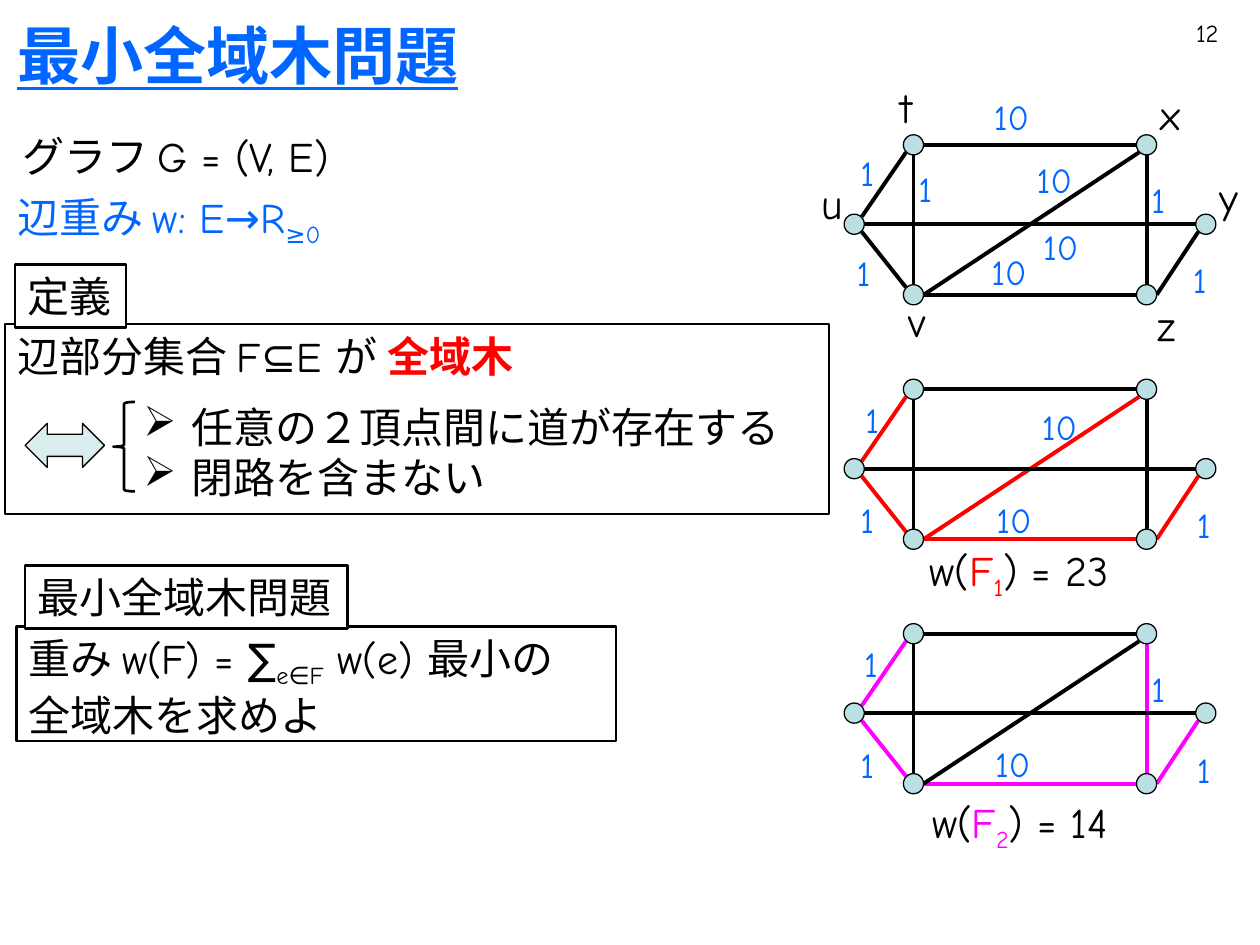
from dataclasses import dataclass
from typing import NamedTuple

from lxml.etree import SubElement
from pptx import Presentation
from pptx.dml.color import RGBColor
from pptx.enum.shapes import MSO_CONNECTOR, MSO_SHAPE as SHAPE
from pptx.enum.text import MSO_ANCHOR, MSO_AUTO_SIZE, PP_ALIGN
from pptx.oxml.ns import qn
from pptx.util import Inches, Pt


@dataclass(frozen=True)
class Theme:
    black: str = "000000"
    white: str = "FFFFFF"
    blue: str = "0066FF"
    red: str = "FF0000"
    magenta: str = "FF00FF"
    vertex: str = "BBE0E3"
    arrow: str = "DAEDEF"
    latin: str = "Comic Neue"
    cjk: str = "Noto Sans CJK JP"
    title: int = 36
    body: int = 24
    weight: int = 20
    page: int = 14
    thin: float = 0.75
    frame: float = 1.5
    edge: float = 2.25


T = Theme()


class Run(NamedTuple):
    text: str
    color: str = T.black
    bold: bool = False
    underline: bool = False
    sub: bool = False


class Para(NamedTuple):
    runs: list[Run]
    bullet: bool = False
    before: int = 0


class Box(NamedTuple):
    left: float
    top: float
    width: float
    height: float


class Graph(NamedTuple):
    dy: float
    tree: str
    color: str
    weights: list[tuple[str, float, float]]


RADIUS = 0.08
PITCH = 1.94
VERTICES = {"u": (6.78, 1.78), "t": (7.25, 1.15), "v": (7.25, 2.34),
            "x": (9.1, 1.15), "z": (9.1, 2.34), "y": (9.57, 1.78)}
SITES = {"E": (0.08, 0), "W": (-0.08, 0), "N": (0, -0.08), "S": (0, 0.08),
         "NE": (0.06, -0.06), "SE": (0.06, 0.06),
         "NW": (-0.06, -0.06), "SW": (-0.06, 0.06)}
EDGES = {"tu": ("SW", "NE"), "uv": ("SE", "NW"), "tx": ("E", "W"),
         "vz": ("E", "W"), "xz": ("S", "N"), "tv": ("S", "N"),
         "zy": ("E", "SW"), "vx": ("E", "SW"), "uy": ("E", "W")}

GRAPHS = [
    Graph(0, "", T.black, [
        ("10", 7.79, 0.71), ("1", 6.73, 1.15), ("10", 8.13, 1.21),
        ("10", 8.18, 1.74), ("10", 7.77, 1.94), ("1", 7.19, 1.28),
        ("1", 6.7, 1.95), ("1", 9.37, 2), ("1", 9.04, 1.37)]),
    Graph(PITCH, "tu uv vz zy vx", T.red, [
        ("1", 6.77, 3.11), ("10", 8.17, 3.17), ("10", 7.81, 3.91),
        ("1", 6.73, 3.91), ("1", 9.4, 3.95)]),
    Graph(2 * PITCH, "tu uv vz xz zy", T.magenta, [
        ("1", 6.76, 5.05), ("10", 7.8, 5.84), ("1", 6.73, 5.85),
        ("1", 9.4, 5.89), ("1", 9.04, 5.25)]),
]
NAMES = [("t", 7.05, 0.6), ("u", 6.42, 1.36), ("v", 7.11, 2.3),
         ("z", 9.09, 2.33), ("y", 9.58, 1.31), ("x", 9.11, 0.65)]


def rgb(color: str) -> RGBColor:
    return RGBColor.from_string(color)


def add_run(p, run: Run, size: int, latin: str) -> None:
    r = p.add_run()
    r.text = run.text
    fmt = {"size": Pt(size), "name": latin, "bold": run.bold, "underline": run.underline}
    for name, value in fmt.items():
        setattr(r.font, name, value)
    r.font.color.rgb = rgb(run.color)
    rpr = r.font._element
    SubElement(rpr, qn("a:ea")).set("typeface", T.cjk)
    if run.sub:
        rpr.set("baseline", "-25000")


def add_bullet(p) -> None:
    p.level = 2
    ppr = p._p.get_or_add_pPr()
    ppr.set("marL", str(Inches(1.38)))
    ppr.set("indent", str(Inches(-0.38)))
    SubElement(ppr, qn("a:buChar")).set("char", "➢")


def write(sp, paras: list[Para], size: int = T.body, latin: str = T.latin,
          align=PP_ALIGN.LEFT, anchor=MSO_ANCHOR.TOP, grow: bool = True) -> None:
    tf = sp.text_frame
    fmt = {"word_wrap": not grow, "vertical_anchor": anchor,
           "auto_size": MSO_AUTO_SIZE.SHAPE_TO_FIT_TEXT if grow else MSO_AUTO_SIZE.NONE}
    for name, value in fmt.items():
        setattr(tf, name, value)
    for i, para in enumerate(paras):
        p = tf.add_paragraph() if i else tf.paragraphs[0]
        p.alignment = align
        if para.before:
            p.space_before = Pt(para.before)
        if para.bullet:
            add_bullet(p)
        for run in para.runs:
            add_run(p, run, size, latin)


def add_text(s, box: Box, runs: list[Run], **style) -> None:
    write(s.shapes.add_textbox(*map(Inches, box)), [Para(runs)], **style)


def add_shape(s, kind, box: Box, fill: str = "", width: float = T.thin):
    sp = s.shapes.add_shape(kind, *map(Inches, box))
    sp.shadow.inherit = False
    if fill:
        sp.fill.solid()
        sp.fill.fore_color.rgb = rgb(fill)
    else:
        sp.fill.background()
    sp.line.color.rgb = rgb(T.black)
    sp.line.width = Pt(width)
    return sp


def add_frame(s, box: Box, paras: list[Para], fill: str = "") -> None:
    write(add_shape(s, SHAPE.RECTANGLE, box, fill, T.frame), paras)


def add_edge(s, edge: str, dy: float, color: str) -> None:
    """Join the named contact sites on the rims of two vertices."""
    ends = []
    for vertex, site in zip(edge, EDGES[edge]):
        (x, y), (ox, oy) = VERTICES[vertex], SITES[site]
        ends += [Inches(x + ox), Inches(y + oy + dy)]
    c = s.shapes.add_connector(MSO_CONNECTOR.STRAIGHT, *ends)
    c.line.color.rgb = rgb(color)
    c.line.width = Pt(T.edge)
    SubElement(c._element.spPr, qn("a:effectLst"))


def add_graph(s, g: Graph) -> None:
    for edge in EDGES:
        add_edge(s, edge, g.dy, g.color if edge in g.tree.split() else T.black)
    for x, y in VERTICES.values():
        box = Box(x - RADIUS, y - RADIUS + g.dy, 2 * RADIUS, 2 * RADIUS)
        add_shape(s, SHAPE.OVAL, box, T.vertex)
    for text, left, top in g.weights:
        box = Box(left, top, 0.5 if len(text) > 1 else 0.33, 0.44)
        add_text(s, box, [Run(text, T.blue)], size=T.weight)


def add_total(s, box: Box, index: str, color: str, total: str) -> None:
    add_text(s, box, [Run("w("), Run("F", color), Run(index, color, sub=True),
                      Run(f") = {total}")])


def main() -> None:
    prs = Presentation()
    prs.slide_width, prs.slide_height = Inches(10), Inches(7.5)
    s = prs.slides.add_slide(prs.slide_layouts[6])

    add_text(s, Box(0.04, 0.05, 6.55, 0.76),
             [Run("最小全域木問題", T.blue, bold=True, underline=True)],
             size=T.title, latin=T.cjk, anchor=MSO_ANCHOR.MIDDLE, grow=False)
    add_text(s, Box(7.44, 0.09, 2.33, 0.52), [Run("12")],
             size=T.page, align=PP_ALIGN.RIGHT, grow=False)
    add_text(s, Box(0.08, 0.99, 2.87, 0.5), [Run("グラフ G = (V, E)")])
    add_text(s, Box(0.04, 1.47, 2.79, 0.5),
             [Run("辺重み w: E→R", T.blue), Run("≥0", T.blue, sub=True)])

    add_frame(s, Box(0.13, 4.97, 4.76, 0.91), [
        Para([Run("重み w(F) = ∑"), Run("e∈F", sub=True), Run(" w(e) 最小の")]),
        Para([Run("全域木を求めよ")])])
    add_frame(s, Box(0.2, 4.49, 2.56, 0.5), [Para([Run("最小全域木問題")])], T.white)
    add_frame(s, Box(0.04, 2.57, 6.54, 1.51), [
        Para([Run("辺部分集合 F⊆E が "), Run("全域木", T.red, bold=True)]),
        Para([Run("任意の２頂点間に道が存在する")], bullet=True, before=12),
        Para([Run("閉路を含まない")], bullet=True)])
    add_frame(s, Box(0.12, 2.1, 0.88, 0.5), [Para([Run("定義")])], T.white)
    add_shape(s, SHAPE.LEFT_BRACE, Box(0.9, 3.19, 0.17, 0.71), width=T.frame)
    add_shape(s, SHAPE.LEFT_RIGHT_ARROW, Box(0.2, 3.36, 0.63, 0.35), T.arrow)

    for g in GRAPHS:
        add_graph(s, g)
    for name, left, top in NAMES:
        add_text(s, Box(left, top, 0.38, 0.5), [Run(name)])
    add_total(s, Box(7.28, 4.27, 1.81, 0.5), "1", T.red, "23")
    add_total(s, Box(7.3, 6.27, 1.75, 0.5), "2", T.magenta, "14")

    prs.save("out.pptx")


if __name__ == "__main__":
    main()
